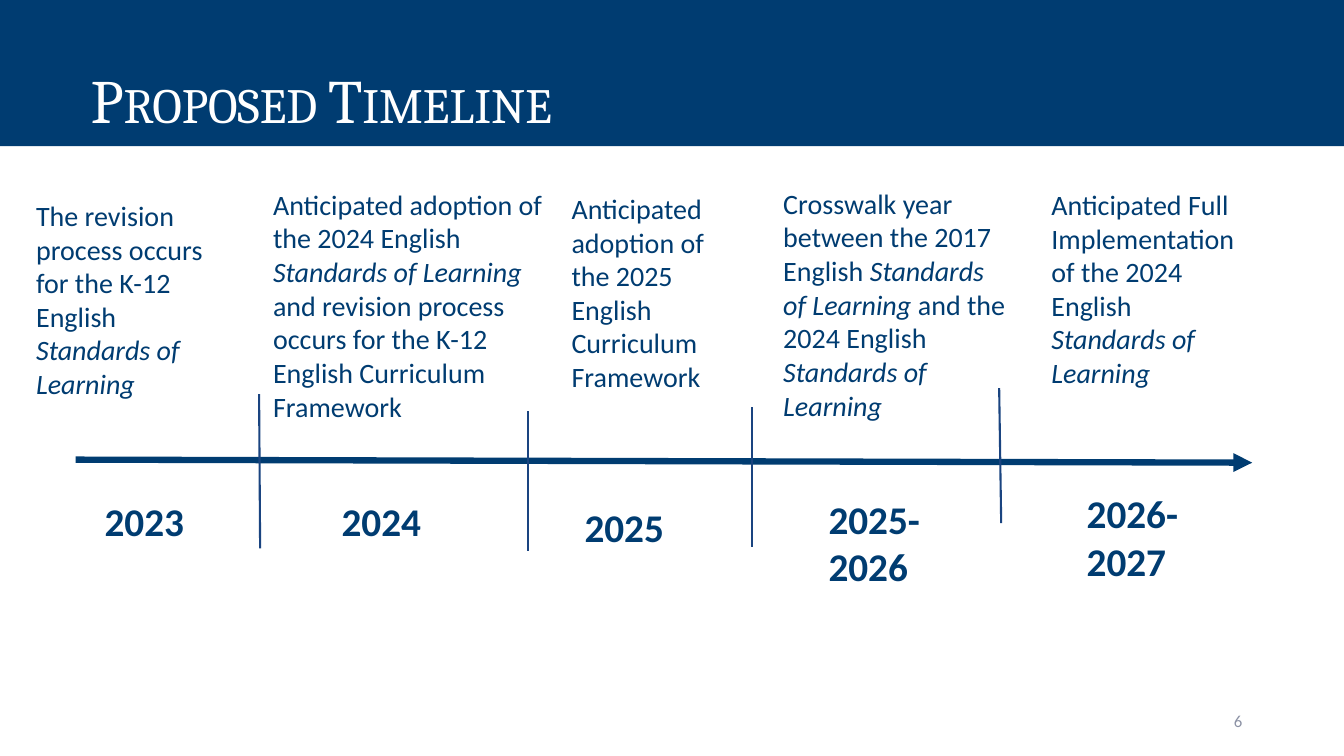
"""Build the proposed timeline slide."""
from dataclasses import dataclass

from lxml.etree import SubElement
from pptx import Presentation
from pptx.dml.color import RGBColor
from pptx.enum.shapes import MSO_CONNECTOR
from pptx.enum.text import MSO_ANCHOR, MSO_AUTO_SIZE, PP_ALIGN
from pptx.oxml.ns import qn
from pptx.util import Inches, Pt

TITLE = "Proposed Timeline"
PAGE_NUMBER = "6"
STANDARDS = "Standards of Learning"

# Each box is (left, top, width, height) in one-inch grid columns and rows.
MILESTONES = [
    {"year": "2023", "year_box": (0.94, 4.88, 1.46, 0.57),
     "text": ["The revision process occurs for the K-12 English ", STANDARDS],
     "text_box": (0.26, 1.92, 1.96, 2.12)},
    {"year": "2024", "year_box": (3.29, 4.88, 1.46, 0.57),
     "text": ["Anticipated adoption of the 2024 English ", STANDARDS + " ",
              "and revision process occurs for the K-12 English Curriculum Framework"],
     "text_box": (2.61, 1.81, 2.93, 2.46)},
    {"year": "2025", "year_box": (5.7, 4.94, 1.46, 0.57),
     "text": ["Anticipated adoption of the 2025 English Curriculum Framework"],
     "text_box": (5.57, 1.85, 1.72, 2.12)},
    {"year": "2025-2026", "year_box": (8.12, 4.86, 1.46, 1.04),
     "text": ["Crosswalk year between the 2017 English ", STANDARDS + " ",
              "and the 2024 English ", STANDARDS],
     "text_box": (7.67, 1.8, 2.46, 2.46)},
    {"year": "2026-2027", "year_box": (10.68, 4.81, 1.46, 1.04),
     "text": ["Anticipated Full Implementation of the 2024 English ", STANDARDS],
     "text_box": (10.33, 1.81, 2.17, 2.42)},
]
AXIS = (0.75, 4.56, 12.42, 4.59)
DIVIDERS = [
    (2.57, 3.91, 2.58, 5.44),
    (5.24, 4.08, 5.24, 5.47),
    (7.46, 4.04, 7.46, 5.43),
    (9.91, 3.85, 9.93, 5.19),
]
BANNER_BOX = (0, 0, 13.33, 1.45)
NUMBER_BOX = (9.42, 6.95, 3, 0.4)


@dataclass(frozen=True)
class Theme:
    """Colours, fonts and sizes of the slide."""
    navy: RGBColor = RGBColor.from_string("003C71")
    divider: RGBColor = RGBColor.from_string("1A4480")
    gray: RGBColor = RGBColor.from_string("8C92A5")
    white: RGBColor = RGBColor.from_string("FFFFFF")
    title_font: str = "Cambria"
    body_font: str = "Calibri"
    title_size: int = 44
    year_size: int = 28
    text_size: int = 20
    number_size: int = 12
    axis_width: float = 4.5
    divider_width: float = 1.5


THEME = Theme()


def grid(values):
    """Convert grid units to slide lengths."""
    return [Inches(value) for value in values]


def style(run, size, color, name=THEME.body_font, bold=False, italic=False):
    """Format one run."""
    font = run.font
    font.name, font.size, font.color.rgb = name, Pt(size), color
    font.bold, font.italic = bold, italic


def add_title(slide):
    """Turn the title placeholder into the banner."""
    title = slide.shapes.title
    title.left, title.top, title.width, title.height = grid(BANNER_BOX)
    title.fill.solid()
    title.fill.fore_color.rgb = THEME.navy
    frame = title.text_frame
    frame.text = TITLE
    frame.auto_size, frame.word_wrap = MSO_AUTO_SIZE.NONE, True
    frame.vertical_anchor = MSO_ANCHOR.TOP
    frame.margin_left, frame.margin_top, frame.margin_right, frame.margin_bottom = grid(
        (0.9, 0.7, 0.1, 0.05))
    paragraph = frame.paragraphs[0]
    paragraph.alignment = PP_ALIGN.LEFT
    paragraph.line_spacing, paragraph.space_before = 0.9, Pt(10)
    run = paragraph.runs[0]
    style(run, THEME.title_size, THEME.white, THEME.title_font)
    run.font._element.set("cap", "small")


def add_text(slide, box, parts, size, color=THEME.navy, bold=False):
    """Add a wrapped text box whose every second part is italic."""
    frame = slide.shapes.add_textbox(*grid(box)).text_frame
    frame.word_wrap = True
    for index, part in enumerate(parts):
        run = frame.paragraphs[0].add_run()
        run.text = part
        style(run, size, color, bold=bold, italic=index % 2 == 1)
    return frame


def add_line(slide, ends, color, width):
    """Add a straight line without a shadow."""
    connector = slide.shapes.add_connector(MSO_CONNECTOR.STRAIGHT, *grid(ends))
    connector.line.color.rgb, connector.line.width = color, Pt(width)
    SubElement(connector._element.spPr, qn("a:effectLst"))
    return connector


def main():
    """Compose and save the slide."""
    presentation = Presentation()
    presentation.slide_width, presentation.slide_height = grid((13.33, 7.5))
    slide = presentation.slides.add_slide(presentation.slide_layouts[5])
    add_title(slide)
    axis = add_line(slide, AXIS, THEME.navy, THEME.axis_width)
    SubElement(axis.line._get_or_add_ln(), qn("a:tailEnd"), type="triangle")
    for milestone in MILESTONES:
        add_text(slide, milestone["year_box"], [milestone["year"]], THEME.year_size, bold=True)
        add_text(slide, milestone["text_box"], milestone["text"], THEME.text_size)
    for ends in DIVIDERS:
        add_line(slide, ends, THEME.divider, THEME.divider_width)
    number = add_text(slide, NUMBER_BOX, [PAGE_NUMBER], THEME.number_size, THEME.gray)
    number.vertical_anchor = MSO_ANCHOR.MIDDLE
    number.paragraphs[0].alignment = PP_ALIGN.RIGHT
    presentation.save("out.pptx")


if __name__ == "__main__":
    main()
